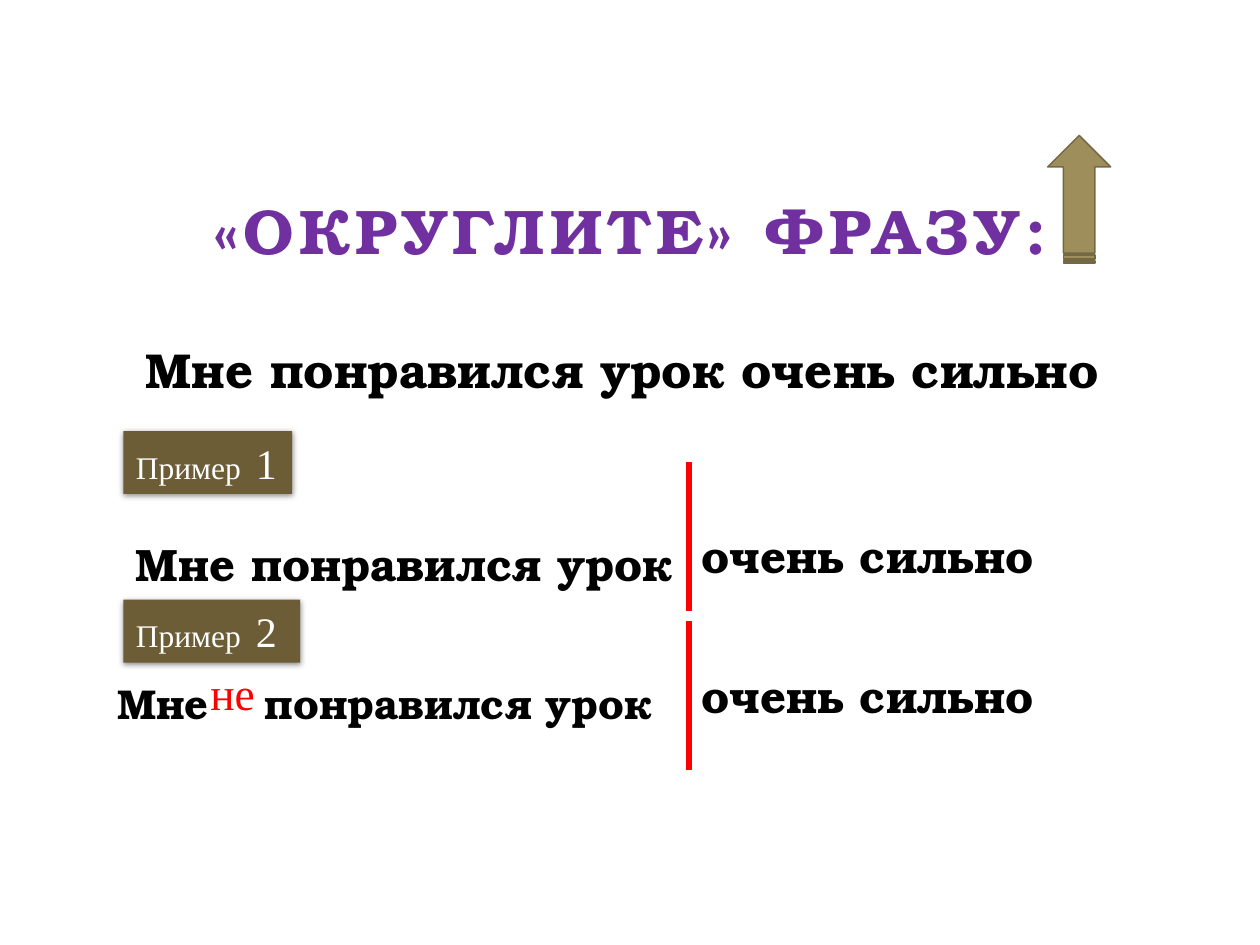
from dataclasses import dataclass

from lxml import etree
from pptx import Presentation
from pptx.dml.color import RGBColor
from pptx.enum.shapes import MSO_CONNECTOR, MSO_SHAPE
from pptx.enum.text import MSO_ANCHOR, MSO_AUTO_SIZE, PP_ALIGN
from pptx.oxml import parse_xml
from pptx.oxml.ns import nsdecls, qn
from pptx.util import Cm, Pt

RECTANGLE = MSO_SHAPE.RECTANGLE
STRIPED_ARROW = MSO_SHAPE.STRIPED_RIGHT_ARROW
STRAIGHT = MSO_CONNECTOR.STRAIGHT
TOP, BOTTOM = MSO_ANCHOR.TOP, MSO_ANCHOR.BOTTOM
LEFT, CENTER = PP_ALIGN.LEFT, PP_ALIGN.CENTER
FIT_SHAPE = MSO_AUTO_SIZE.SHAPE_TO_FIT_TEXT


@dataclass(frozen=True)
class Theme:
    serif: str = "TeX Gyre Bonum"
    roman: str = "Times New Roman"
    purple: RGBColor = RGBColor(0x70, 0x30, 0xA0)
    black: RGBColor = RGBColor(0, 0, 0)
    white: RGBColor = RGBColor(255, 255, 255)
    red: RGBColor = RGBColor(255, 0, 0)
    label: RGBColor = RGBColor(0x6D, 0x5D, 0x36)
    arrow: RGBColor = RGBColor(0x9E, 0x8E, 0x5C)
    arrow_edge: RGBColor = RGBColor(0x75, 0x69, 0x44)
    title_size: float = 36
    phrase_size: float = 28
    first_size: float = 25.9
    second_size: float = 23.8
    ending_size: float = 26
    label_size: float = 18
    number_size: float = 24


THEME = Theme()


def write(shape, runs, font, color, bold=False, line_spacing=None,
          align=LEFT, anchor=TOP):
    """Fill a shape with one paragraph of (text, size, letter spacing) runs.

    Text with a line spacing wraps; other text keeps to one line.
    """
    frame = shape.text_frame
    frame.vertical_anchor = anchor
    frame.word_wrap = line_spacing is not None
    if line_spacing is None:
        frame.auto_size = FIT_SHAPE
    paragraph = frame.paragraphs[0]
    paragraph.alignment = align
    if line_spacing and line_spacing > 1:
        paragraph.line_spacing = line_spacing
        paragraph.space_before = Pt(runs[0][1] * 0.2)
    for text, size, spacing in runs:
        run = paragraph.add_run()
        run.text = text
        run.font.name = font
        run.font.size = Pt(size)
        run.font.bold = bold
        run.font.color.rgb = color
        if spacing:
            run.font._element.set("spc", str(spacing * 100))


prs = Presentation()
prs.slide_width, prs.slide_height = Cm(25.4), Cm(19.05)
slide = prs.slides.add_slide(prs.slide_layouts[6])
shapes = slide.shapes

title = shapes.add_textbox(Cm(3.81), Cm(3.61), Cm(17.78), Cm(1.91))
write(title, [("«ОКРУГЛИТЕ» ФРАЗУ:", THEME.title_size, 3)], THEME.serif,
      THEME.purple, bold=True, line_spacing=1, align=CENTER, anchor=BOTTOM)

phrase = shapes.add_textbox(Cm(2.69), Cm(6.12), Cm(20.4), Cm(2.39))
write(phrase, [("Мне понравился урок очень сильно", THEME.phrase_size, 0)],
      THEME.serif, THEME.black, bold=True, line_spacing=1.5)

# Beginnings of the phrase; the second leaves a gap for the inserted word
first_runs = [("Мне понравился урок", THEME.first_size, 0)]
second_runs = [("Мне", THEME.second_size, 0),
               (" ", THEME.second_size, 24),
               ("понравился урок", THEME.second_size, 0)]
beginnings = [(2.49, 10.13, first_runs, 1.5), (2.11, 13.13, second_runs, 1.4)]
for left, top, runs, spacing in beginnings:
    beginning = shapes.add_textbox(Cm(left), Cm(top), Cm(12.19), Cm(2.39))
    write(beginning, runs, THEME.serif, THEME.black, bold=True,
          line_spacing=spacing)

# Red dividers with the separated endings
divider_x = Cm(13.89)
for divider_top, ending_top in [(9.32, 10.52), (12.52, 13.34)]:
    divider = shapes.add_connector(STRAIGHT, divider_x, Cm(divider_top),
                                   divider_x, Cm(divider_top + 3))
    divider.line.color.rgb = THEME.red
    divider.line.width = Pt(3.25)
    etree.SubElement(divider._element.spPr, qn("a:effectLst"))

    ending = shapes.add_textbox(divider_x, Cm(ending_top), Cm(7.29), Cm(1.37))
    write(ending, [("очень сильно", THEME.ending_size, 0)], THEME.serif,
          THEME.black, bold=True)

# Example labels with a soft shadow below
for number, top, width in [("1", 8.69, 3.4), ("2", 12.09, 3.56)]:
    label = shapes.add_shape(RECTANGLE, Cm(2.49), Cm(top), Cm(width), Cm(1.27))
    label.fill.solid()
    label.fill.fore_color.rgb = THEME.label
    label.line.fill.background()
    label._element.spPr.append(parse_xml(
        f'<a:effectLst {nsdecls("a")}>'
        '<a:outerShdw blurRad="44450" dist="13970" dir="5400000">'
        '<a:srgbClr val="000000"><a:alpha val="45000"/></a:srgbClr>'
        '</a:outerShdw></a:effectLst>'))
    write(label, [("Пример", THEME.label_size, 0),
                  (" ", THEME.label_size, 4),
                  (number, THEME.number_size, 0)], THEME.roman, THEME.white)

inserted_word = shapes.add_textbox(Cm(3.99), Cm(13.28), Cm(1.5), Cm(1.37))
write(inserted_word, [("не", THEME.ending_size, 0)], THEME.roman, THEME.red)

arrow = shapes.add_shape(STRIPED_ARROW, Cm(20.47), Cm(3.38), Cm(2.57), Cm(1.27))
arrow.rotation = 270
arrow.shadow.inherit = False
arrow.fill.solid()
arrow.fill.fore_color.rgb = THEME.arrow
arrow.line.color.rgb = THEME.arrow_edge
arrow.line.width = Pt(0.85)

prs.save("out.pptx")
